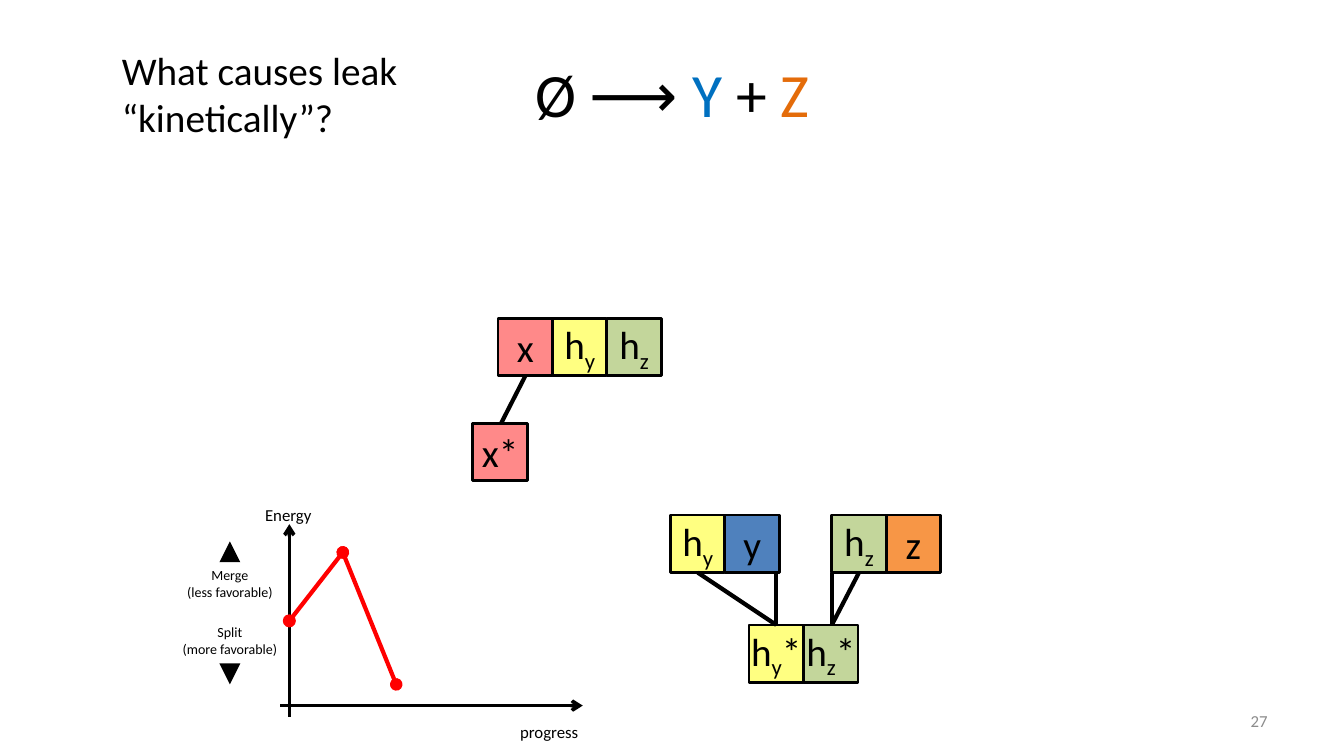
from lxml import etree
from pptx import Presentation
from pptx.dml.color import RGBColor
from pptx.enum.shapes import MSO_CONNECTOR, MSO_SHAPE
from pptx.enum.text import MSO_ANCHOR, PP_ALIGN
from pptx.oxml.ns import qn
from pptx.util import Inches, Pt

LINE = MSO_CONNECTOR.STRAIGHT
RECT, OVAL = MSO_SHAPE.RECTANGLE, MSO_SHAPE.OVAL
LEFT, MID, RIGHT = PP_ALIGN.LEFT, PP_ALIGN.CENTER, PP_ALIGN.RIGHT
TOP, CENTRE = MSO_ANCHOR.TOP, MSO_ANCHOR.MIDDLE

BLACK = RGBColor(0x00, 0x00, 0x00)
GREY = RGBColor(0x8C, 0x8C, 0x8C)
RED = RGBColor(0xFF, 0x00, 0x00)
ROSE = RGBColor(0xFF, 0x89, 0x89)
LEMON = RGBColor(0xFF, 0xFF, 0x81)
GREEN = RGBColor(0xC3, 0xD6, 0x9B)
BLUE = RGBColor(0x4F, 0x81, 0xBD)
AMBER = RGBColor(0xF7, 0x96, 0x46)
SKY = RGBColor(0x00, 0x70, 0xC0)
RUST = RGBColor(0xE4, 0x6C, 0x0A)

FONT = "Calibri"
WIDE, HIGH = 13.33, 7.5
CELL, TALL = 0.54, 0.57
STEP, ROW = 0.53, 0.1

FILLS = {"x": ROSE, "x*": ROSE, "y": BLUE, "z": AMBER,
         "h_y": LEMON, "h_y*": LEMON, "h_z": GREEN, "h_z*": GREEN}


def place(shape, box):
    shape.left, shape.top, shape.width, shape.height = map(Inches, box)


def style(para, size, align, color=BLACK):
    para.alignment = align
    para.font.name = FONT
    para.font.size = Pt(size)
    para.font.color.rgb = color


def label(slide, box, text, size, align=LEFT, color=BLACK, anchor=TOP):
    shape = slide.shapes.add_textbox(*map(Inches, box))
    frame = shape.text_frame
    frame.word_wrap = True
    frame.vertical_anchor = anchor
    frame.text = text
    for para in frame.paragraphs:
        style(para, size, align, color)


def link(slide, start, end, width, color=BLACK, head=None, tail=None):
    line = slide.shapes.add_connector(LINE, *map(Inches, (*start, *end)))
    line.line.width = Pt(width)
    line.line.color.rgb = color
    stroke = line.line._get_or_add_ln()
    for tag, kind in (("a:headEnd", head), ("a:tailEnd", tail)):
        if kind:
            etree.SubElement(stroke, qn(tag)).set("type", kind)
    etree.SubElement(line._element.spPr, qn("a:effectLst"))


def cell(slide, left, top, name):
    box = slide.shapes.add_shape(RECT, *map(Inches, (left, top, CELL, TALL)))
    box.shadow.inherit = False
    box.fill.solid()
    box.fill.fore_color.rgb = FILLS[name]
    box.line.color.rgb = BLACK
    box.line.width = Pt(2)
    frame = box.text_frame
    frame.word_wrap = False
    frame.vertical_anchor = CENTRE
    frame.margin_left = frame.margin_right = 0
    frame.margin_top = frame.margin_bottom = 0
    para = frame.paragraphs[0]
    style(para, 28, MID)
    base, mark, rest = name.partition("_")
    para.add_run().text = base
    if mark:
        sub = para.add_run()
        sub.text = rest[0]
        sub._r.get_or_add_rPr().set("baseline", "-25000")
        if rest[1:]:
            para.add_run().text = rest[1:]


def strand(slide, left, top, names):
    for i, name in enumerate(names):
        cell(slide, left + i * CELL, top, name)


def heading(slide, box):
    title = slide.shapes.title
    place(title, box)
    title.text_frame.vertical_anchor = CENTRE
    para = title.text_frame.paragraphs[0]
    style(para, 44, MID)
    for text, color in (("Ø ⟶ ", BLACK), ("Y", SKY),
                        (" + ", BLACK), ("Z", RUST)):
        run = para.add_run()
        run.text = text
        run.font.color.rgb = color


def input_pair(slide, left, top):
    low = top + 1.04
    link(slide, (left + CELL / 2, top + TALL),
         (left + 0.03, low), 3)
    strand(slide, left, top, ("x", "h_y", "h_z"))
    strand(slide, left - 0.25, low, ("x*",))


def output_pair(slide, left, top):
    low, foot = top + 1.09, top + TALL
    right = left + 1.6
    base = left + 0.78
    strand(slide, left, top, ("h_y", "y"))
    strand(slide, right, top, ("h_z", "z"))
    strand(slide, base, low, ("h_y*", "h_z*"))
    inner = base + CELL / 2
    for start, end in ((inner, inner), (right, right),
                       (left + CELL / 2, inner),
                       (right + CELL / 2, right)):
        link(slide, (start, foot), (end, low), 3)


def graph(slide, left, top):
    base = top + 18 * ROW
    link(slide, (left, top), (left, base + 0.11), 2.5, head="arrow")
    link(slide, (left + 2.91, base), (left - 0.09, base), 2.5, head="arrow")
    label(slide, (left + 2.19, base + 0.11, 0.85, 0.3), "progress", 12)
    label(slide, (left - 0.34, top - 0.24, 0.75, 0.3), "Energy", 12)

    mid = left - 0.59
    for text, row, tip, turn in (
            ("Merge\n(less favorable)", 3.7, 3.7, -2),
            ("Split\n(more favorable)", 9.4, 13.9, 2)):
        label(slide, (mid - 0.6, top + row * ROW, 1.2, 0.44), text, 10, MID)
        start = top + tip * ROW
        link(slide, (mid, start), (mid, start + turn * ROW), 5,
             tail="triangle")

    first, peak, last = [(left + i * STEP, top + row * ROW)
                         for i, row in enumerate((9.6, 2.8, 15.9))]
    link(slide, peak, first, 3, RED, head="oval")
    link(slide, last, peak, 3, RED, head="oval", tail="oval")
    size = 0.13
    dot = slide.shapes.add_shape(OVAL, *map(Inches, (
        first[0] - size / 2, first[1] - size / 2, size, size)))
    dot.shadow.inherit = False
    dot.fill.solid()
    dot.fill.fore_color.rgb = RED
    dot.line.fill.background()


def main():
    deck = Presentation()
    deck.slide_width, deck.slide_height = Inches(WIDE), Inches(HIGH)
    slide = deck.slides.add_slide(deck.slide_layouts[5])
    heading(slide, (2.17, 0.3, 9, 1.25))
    label(slide, (1.11, 0.41, 3.05, 1.04),
          "What causes leak\n“kinetically”?", 28)
    input_pair(slide, 4.94, 3.16)
    output_pair(slide, 6.65, 5.11)
    graph(slide, 2.87, 5.2)
    label(slide, (9.56, 6.95, 3.11, 0.4), "27", 12, RIGHT, GREY, CENTRE)
    deck.save("out.pptx")


if __name__ == "__main__":
    main()
